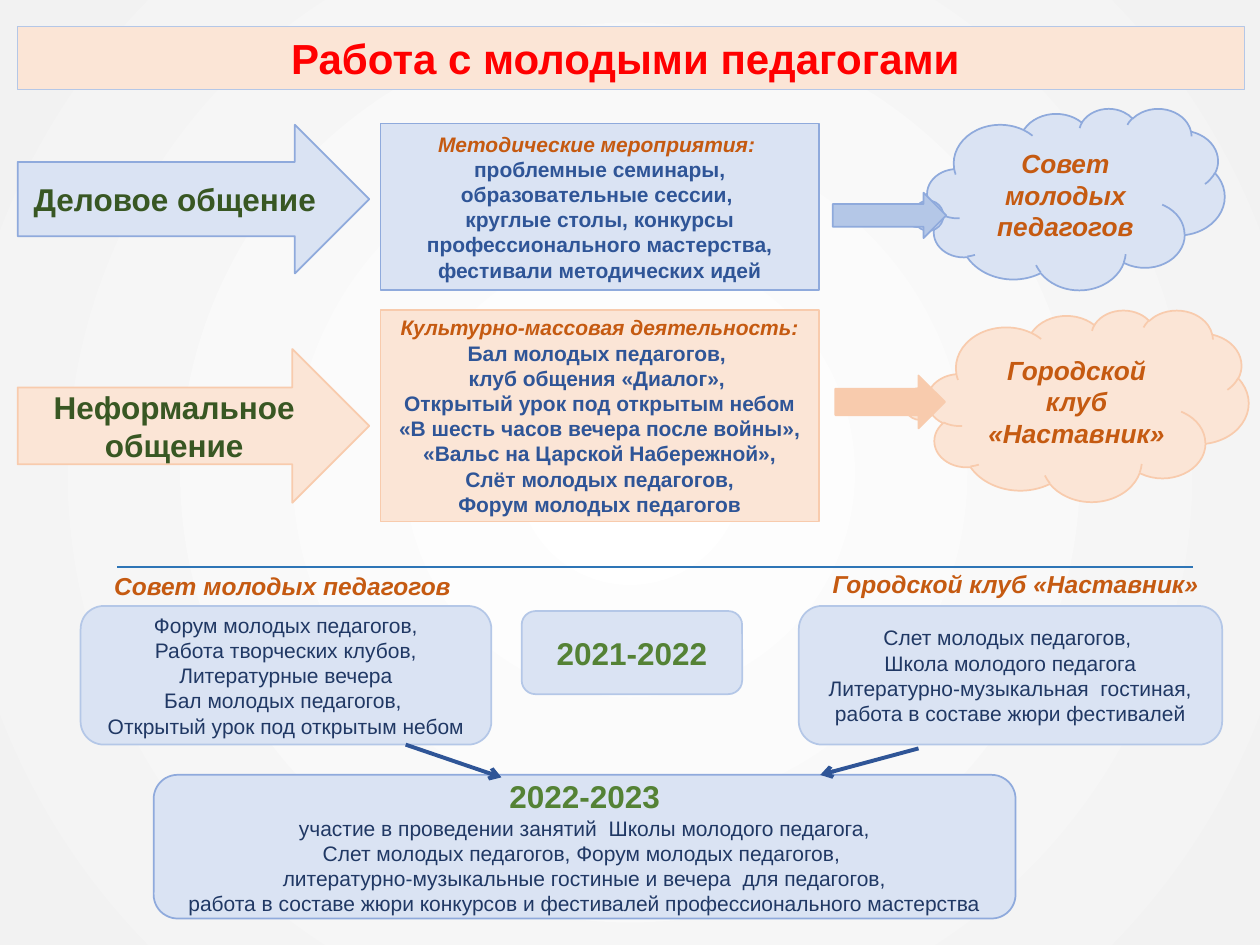
from lxml.etree import SubElement
from pptx import Presentation
from pptx.dml.color import RGBColor
from pptx.enum.shapes import MSO_CONNECTOR as LINE, MSO_SHAPE as SHAPE
from pptx.enum.text import MSO_ANCHOR as ANCHOR, MSO_AUTO_SIZE as AUTO, PP_ALIGN as ALIGN
from pptx.oxml.ns import qn
from pptx.util import Inches, Pt

COLORS = {
    "white": "FFFFFF", "grey": "F2F2F2", "red": "FF0000", "orange": "C55A11",
    "navy": "203864", "blue": "2F5597", "rule": "2E75B6", "sky": "8FAADC",
    "mist": "B4C7E7", "ice": "DAE3F3", "peach": "FBE5D6", "apricot": "F8CBAD",
    "forest": "385723", "green": "548235",
}
STYLES = {
    "title": (24, "red", True, False),
    "kind": (18, "forest", True, False),
    "year": (18, "green", True, False),
    "club": (15, "orange", True, True),
    "label": (14, "orange", True, True),
    "head": (12, "orange", True, True),
    "event": (12, "blue", True, False),
    "plain": (12, "navy", False, False),
}


class Deck:
    """Draws one slide on a grid of 100 columns by 75 rows."""

    def __init__(self, font="Arial"):
        self.prs = Presentation()
        self.prs.slide_width, self.prs.slide_height = Inches(10), Inches(7.5)
        self.col, self.row = self.prs.slide_width / 100, self.prs.slide_height / 75
        self.font = font
        self.s = self.prs.slides.add_slide(self.prs.slide_layouts[5])

    def grid(self, x, y):
        return int(x * self.col), int(y * self.row)

    def color(self, name):
        return RGBColor.from_string(COLORS[name])

    def background(self, inner, outer):
        fill = self.s.background.fill
        fill.gradient()
        for stop, name in zip(fill.gradient_stops, (inner, outer)):
            stop.color.rgb = self.color(name)
        grad = next(self.s.element.iter(qn("a:gradFill")))
        grad.remove(grad.find(qn("a:lin")))
        circle = SubElement(grad, qn("a:path"), {"path": "circle"})
        SubElement(circle, qn("a:fillToRect"), {side: "50000" for side in "ltrb"})

    def paint(self, sp, fill, line, width=1):
        sp.fill.solid()
        sp.fill.fore_color.rgb = self.color(fill)
        sp.line.color.rgb = self.color(line)
        sp.line.width = Pt(width)

    def put_text(self, sp, parts, anchor=ANCHOR.MIDDLE, wrap=True):
        tf = sp.text_frame
        lines = [(style, line) for style, text in parts for line in text.split("\n")]
        tf.text = "\n".join(line for _, line in lines)
        tf.word_wrap, tf.auto_size, tf.vertical_anchor = wrap, AUTO.NONE, anchor
        for p, (style, _) in zip(tf.paragraphs, lines):
            p.alignment = ALIGN.CENTER
            for r in p.runs:
                size, color, r.font.bold, r.font.italic = STYLES[style]
                r.font.name, r.font.size = self.font, Pt(size)
                r.font.color.rgb = self.color(color)

    def title(self, x, y, w, h, text, fill, line):
        sp = self.s.shapes.title
        sp.left, sp.top = self.grid(x, y)
        sp.width, sp.height = self.grid(w, h)
        self.paint(sp, fill, line, 0.5)
        self.put_text(sp, [("title", text)])

    def shape(self, kind, x, y, w, h, fill, line, *parts, adj=()):
        sp = self.s.shapes.add_shape(kind, *self.grid(x, y), *self.grid(w, h))
        sp.shadow.inherit = False
        self.paint(sp, fill, line)
        for i, value in enumerate(adj):
            sp.adjustments[i] = value
        if parts:
            self.put_text(sp, parts)

    def label(self, x, y, w, h, text):
        sp = self.s.shapes.add_textbox(*self.grid(x, y), *self.grid(w, h))
        self.put_text(sp, [("label", text)], ANCHOR.TOP, False)

    def line(self, start, end, color, width, arrow=False):
        c = self.s.shapes.add_connector(LINE.STRAIGHT, *self.grid(*start), *self.grid(*end))
        c.line.color.rgb = self.color(color)
        c.line.width = Pt(width)
        props = c.element.spPr
        if arrow:
            SubElement(props.find(qn("a:ln")), qn("a:tailEnd"), type="arrow")
        SubElement(props, qn("a:effectLst"))


def main():
    d = Deck()
    d.background("white", "grey")
    d.title(1.4, 2.1, 97.4, 5, "Работа с молодыми педагогами ", "peach", "mist")

    d.shape(SHAPE.RECTANGLE, 30.2, 9.8, 34.8, 13.2, "ice", "sky",
            ("head", "Методические мероприятия: "),
            ("event", "проблемные семинары, образовательные сессии, \n"
                      "круглые столы, конкурсы профессионального мастерства, "
                      "фестивали методических идей"))
    d.shape(SHAPE.RIGHT_ARROW, 1.4, 9.9, 27.9, 11.8, "ice", "sky",
            ("kind", "Деловое общение"))
    d.shape(SHAPE.RIGHT_ARROW, 1.4, 27.7, 27.9, 12.2, "peach", "apricot",
            ("kind", "Неформальное общение"))
    d.shape(SHAPE.CLOUD_CALLOUT, 73.6, 8.6, 23.6, 14.4, "ice", "sky",
            ("club", "Совет молодых педагогов"), adj=(-0.54, 0.1))
    d.shape(SHAPE.RECTANGLE, 30.2, 24.6, 34.8, 16.8, "peach", "apricot",
            ("head", "Культурно-массовая деятельность:"),
            ("event", "Бал молодых педагогов, \nклуб общения «Диалог», \n"
                      "Открытый урок под открытым небом «В шесть часов вечера "
                      "после войны», «Вальс на Царской Набережной»,\n"
                      "Слёт молодых педагогов,\nФорум молодых педагогов"))

    d.line((9.3, 45), (94.7, 45), "rule", 1.5)
    d.shape(SHAPE.ROUNDED_RECTANGLE, 6.4, 48.1, 32.6, 11, "ice", "mist",
            ("plain", "Форум молодых педагогов,\nРабота творческих клубов,\n"
                      "Литературные вечера\nБал молодых педагогов, \n"
                      "Открытый урок под открытым небом"))
    d.shape(SHAPE.ROUNDED_RECTANGLE, 63.4, 48.1, 33.6, 11, "ice", "mist",
            ("plain", "Слет молодых педагогов, \nШкола молодого педагога\n"
                      "Литературно-музыкальная  гостиная, "
                      "работа в составе жюри фестивалей"))
    d.shape(SHAPE.ROUNDED_RECTANGLE, 41.4, 48.5, 17.5, 6.6, "ice", "mist",
            ("year", "2021-2022"))
    d.label(8, 44.8, 29.4, 3.4, "Совет молодых педагогов ")
    d.label(65, 44.7, 31.2, 3.4, "Городской клуб «Наставник»")
    d.shape(SHAPE.ROUNDED_RECTANGLE, 12.2, 61.5, 68.4, 11.4, "ice", "sky",
            ("year", "2022-2023"),
            ("plain", "участие в проведении занятий  Школы молодого педагога,\n"
                      "Слет молодых педагогов, Форум молодых педагогов, \n"
                      "литературно-музыкальные гостиные и вечера  для педагогов,\n"
                      "работа в составе жюри конкурсов и фестивалей "
                      "профессионального мастерства"))
    d.line((32.2, 59.1), (39.8, 61.7), "blue", 2.25, arrow=True)
    d.line((72.9, 59.4), (65.1, 61.5), "blue", 2.25, arrow=True)

    d.shape(SHAPE.CLOUD_CALLOUT, 73.6, 24.6, 25.5, 15.2, "peach", "apricot",
            ("club", "Городской клуб «Наставник»"), adj=(-0.6, -0.01))
    d.shape(SHAPE.RIGHT_ARROW, 66.3, 29.8, 8.7, 4.2, "apricot", "apricot")
    d.shape(SHAPE.RIGHT_ARROW, 66.1, 15.3, 9, 3.6, "mist", "sky")
    d.prs.save("out.pptx")


if __name__ == "__main__":
    main()
